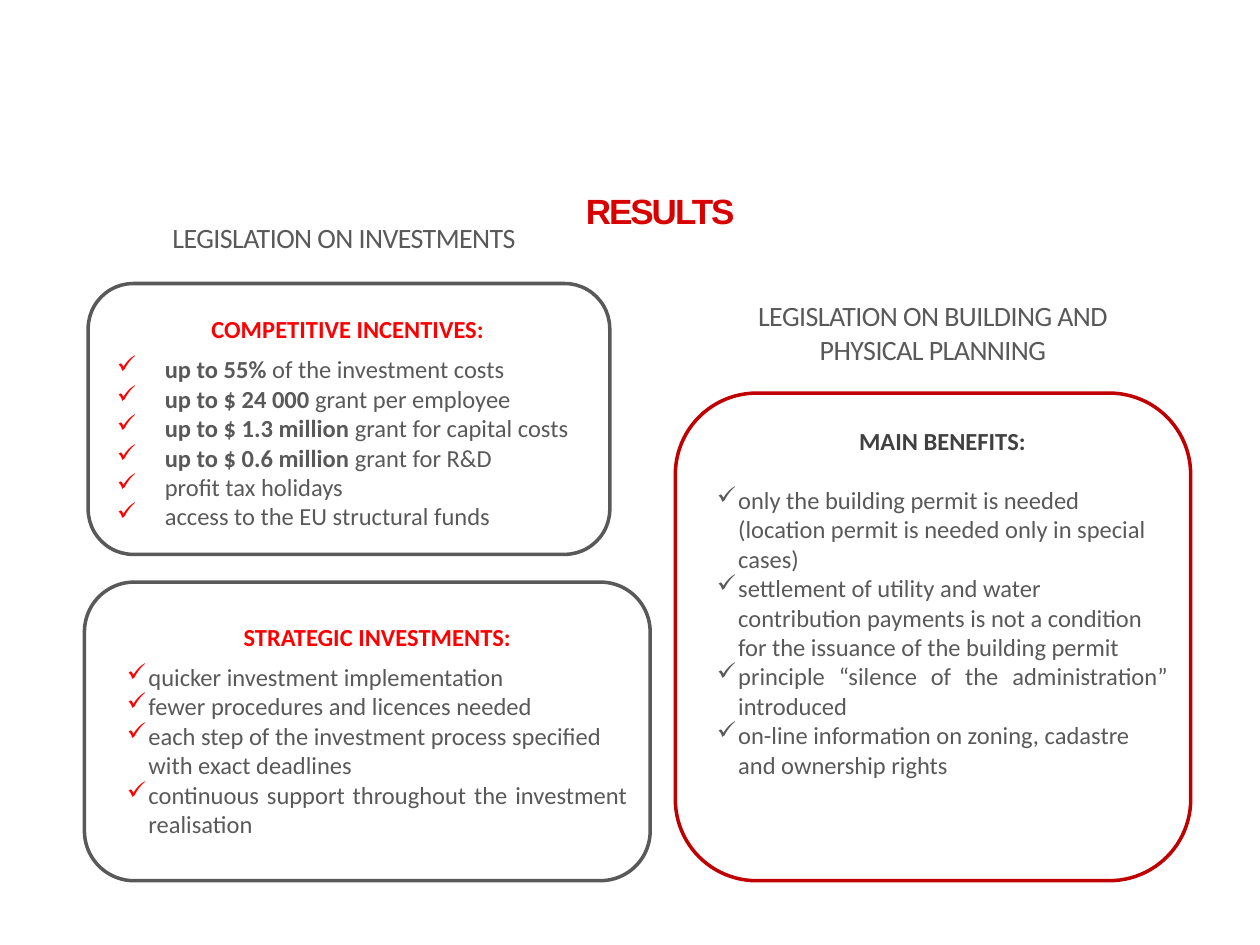
import pptx
import pptx.dml.color
import pptx.enum.shapes
import pptx.enum.text
import pptx.oxml.ns
import pptx.util
from lxml import etree

Inches = pptx.util.Inches
Pt = pptx.util.Pt
RGBColor = pptx.dml.color.RGBColor
Align = pptx.enum.text.PP_ALIGN
qn = pptx.oxml.ns.qn

RED = RGBColor(0xFF, 0x00, 0x00)
TITLE_RED = RGBColor(0xD9, 0x00, 0x00)
DARK_RED = RGBColor(0xC0, 0x00, 0x00)
GRAY = RGBColor(0x59, 0x59, 0x59)
CHARCOAL = RGBColor(0x40, 0x40, 0x40)

INCENTIVES = [
    ("up to 55% ", "of the investment costs"),
    ("up to $ 24 000 ", "grant per employee"),
    ("up to $ 1.3 million ", "grant for capital costs"),
    ("up to $ 0.6 million ", "grant for R&D"),
    ("", "profit tax holidays"),
    ("", "access to the EU structural funds"),
]
STRATEGIC = [
    ("", "quicker investment implementation"),
    ("", "fewer procedures and licences needed"),
    ("", "each step of the investment process specified\vwith exact deadlines"),
    ("", "continuous support throughout the investment realisation"),
]
BENEFITS = [
    ("", "only the building permit is needed\v"
         "(location permit is needed only in special\vcases)"),
    ("", "settlement of utility and water\v"
         "contribution payments is not a condition\v"
         "for the issuance of the building permit"),
    ("", "principle “silence of the administration” introduced"),
    ("", "on-line information on zoning, cadastre\vand ownership rights"),
]


class Deck:
    font_name = "Calibri"
    body_size = 14
    label_size = 16

    def __init__(self):
        self.presentation = pptx.Presentation()
        self.presentation.slide_width = Inches(10)
        self.presentation.slide_height = Inches(7.5)
        self.slide = self.presentation.slides.add_slide(
            self.presentation.slide_layouts[6])

    def frame(self, left, top, width, height, color):
        outline = self.slide.shapes.add_shape(
            pptx.enum.shapes.MSO_SHAPE.ROUNDED_RECTANGLE,
            Inches(left), Inches(top), Inches(width), Inches(height))
        outline.shadow.inherit = False
        outline.fill.background()
        outline.line.color.rgb = color
        outline.line.width = Pt(2)

    def text_box(self, left, top, width, height, wrap=True):
        body = self.slide.shapes.add_textbox(
            Inches(left), Inches(top), Inches(width), Inches(height)).text_frame
        body.word_wrap = wrap
        body.auto_size = pptx.enum.text.MSO_AUTO_SIZE.SHAPE_TO_FIT_TEXT
        return body

    def style(self, paragraph, size, color, bold=False, name=None, spacing=0):
        font = paragraph.font
        font.name = name or self.font_name
        font.size = Pt(size)
        font.bold = bold
        font.color.rgb = color
        if spacing:
            properties = paragraph._p.get_or_add_pPr()
            properties.find(qn("a:defRPr")).set("spc", str(spacing))

    def title(self, text, left, top, width, height):
        heading = self.text_box(left, top, width, height).paragraphs[0]
        heading.text = text
        heading.alignment = Align.CENTER
        heading.line_spacing = 0.8
        self.style(heading, 20, TITLE_RED, True, "Arial", -120)

    def label(self, lines, left, top, width, height, align):
        body = self.text_box(left, top, width, height, wrap=False)
        for index, line in enumerate(lines):
            paragraph = body.add_paragraph() if index else body.paragraphs[0]
            paragraph.text = line
            paragraph.alignment = align
            self.style(paragraph, self.label_size, GRAY, spacing=-30)

    def bullet(self, paragraph, indent, color):
        properties = paragraph._p.get_or_add_pPr()
        properties.set("marL", str(Inches(indent)))
        properties.set("indent", str(-Inches(indent)))
        tint = etree.SubElement(properties, qn("a:buClr"))
        etree.SubElement(tint, qn("a:srgbClr")).set("val", str(color))
        etree.SubElement(properties, qn("a:buChar")).set("char", "✓")

    def checklist(self, heading, items, left, top, width, height, indent=0.17,
                  heading_color=RED, check_color=RED, leading=1.5, gap=6):
        body = self.text_box(left, top, width, height)
        caption = body.paragraphs[0]
        caption.text = heading
        caption.alignment = Align.CENTER
        caption.line_spacing = leading
        caption.space_after = Pt(gap)
        self.style(caption, self.body_size, heading_color, True)
        for strong, plain in items:
            item = body.add_paragraph()
            if strong:
                amount = item.add_run()
                amount.text = strong
                amount.font.bold = True
                item.add_run().text = plain
            else:
                item.text = plain
            item.alignment = Align.LEFT if "\v" in plain else Align.JUSTIFY
            self.bullet(item, indent, check_color)
            self.style(item, self.body_size, GRAY)


def main():
    deck = Deck()
    deck.title("RESULTS", 4.06, 1.52, 2.36, 0.37)
    deck.checklist("COMPETITIVE INCENTIVES:", INCENTIVES,
                   0.83, 2.33, 3.86, 1.95, indent=0.38)
    deck.checklist("STRATEGIC INVESTMENTS:", STRATEGIC, 0.91, 4.77, 4.17, 1.95)
    deck.frame(0.7, 2.25, 4.14, 2.15, GRAY)
    deck.frame(0.67, 4.62, 4.49, 2.37, GRAY)
    deck.frame(5.36, 3.12, 4.09, 3.87, DARK_RED)
    deck.checklist("MAIN BENEFITS:", BENEFITS, 5.59, 3.33, 3.78, 2.93,
                   heading_color=CHARCOAL, check_color=GRAY, leading=1, gap=17)
    deck.label(["LEGISLATION ON INVESTMENTS"],
               1.27, 1.7, 2.97, 0.37, Align.LEFT)
    deck.label(["LEGISLATION ON BUILDING AND", "PHYSICAL PLANNING"],
               5.87, 2.32, 3.07, 0.64, Align.CENTER)
    deck.presentation.save("out.pptx")


if __name__ == "__main__":
    main()
